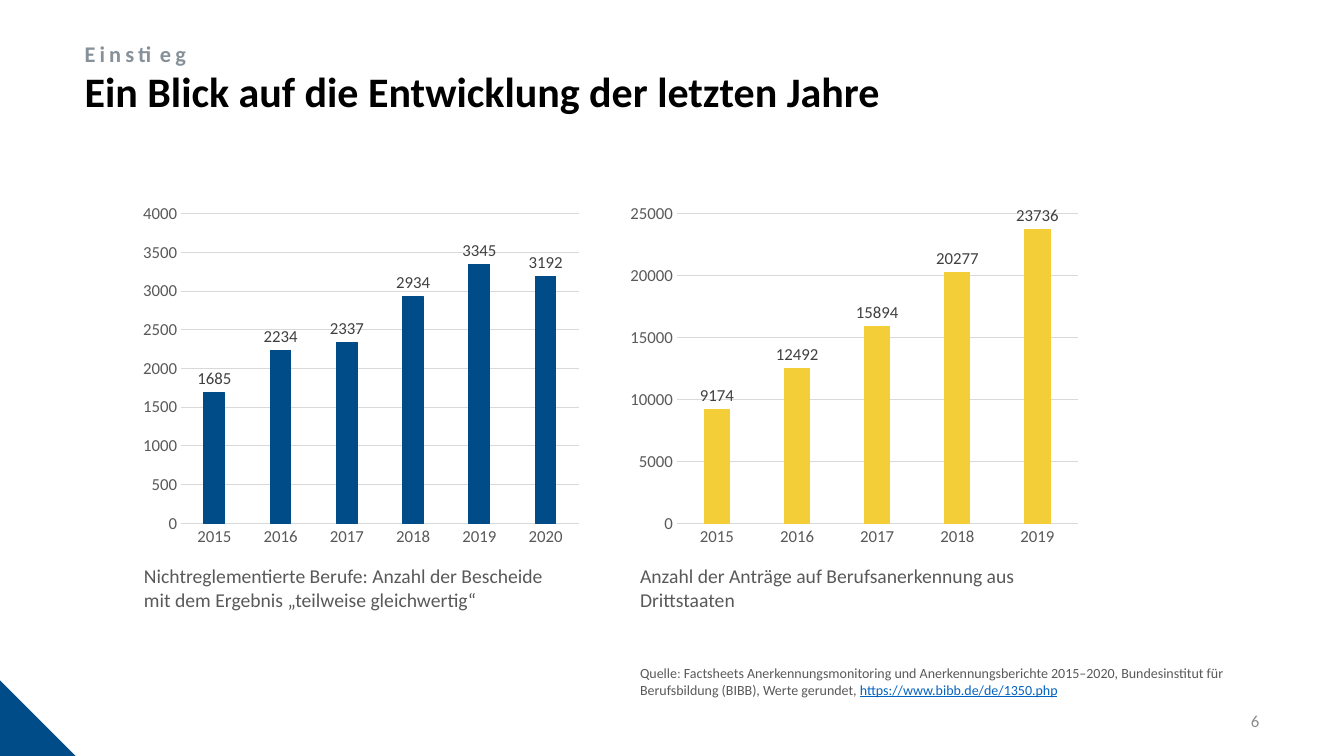
from pptx import Presentation
from pptx import util as u
from pptx.chart.data import CategoryChartData
from pptx.dml.color import RGBColor
from pptx.enum import chart as c, shapes, text

# Content
EYEBROW = "Einstieg"
TITLE = "Ein Blick auf die Entwicklung der letzten Jahre"
PAGE = "6"
CHARTS = [
    dict(left=1.33, width=4.5, caption_left=1.33, color="blue", top_value=4000, step=500,
         values=[1685, 2234, 2337, 2934, 3345, 3192],
         caption="Nichtreglementierte Berufe: Anzahl der Bescheide "
                 "mit dem Ergebnis „teilweise gleichwertig“"),
    dict(left=6.16, width=4.62, caption_left=6.25, color="yellow", top_value=25000, step=5000,
         values=[9174, 12492, 15894, 20277, 23736],
         caption="Anzahl der Anträge auf Berufsanerkennung aus Drittstaaten"),
]
FIRST_YEAR = 2015
SOURCE = [  # text, colour, underlined
    ("Quelle", "text", False),
    (": ", "colon", False),
    ("Factsheets Anerkennungsmonitoring und Anerkennungsberichte 2015–2020, "
     "Bundesinstitut für Berufsbildung (BIBB), Werte gerundet, ", "text", False),
    ("https://www.bibb.de/de/1350.php", "link", True),
]


class Theme:
    font = "Calibri"
    colors = dict(blue="004C89", yellow="F4CE39", title="000000", eyebrow="87919A",
                  text="595959", label="404040", grid="D9D9D9", colon="7C7C7C",
                  link="0563C1", page="8C8C8C")
    sizes = dict(title=30, eyebrow=16, caption=14, chart=12, page=12, source=10)


def color(name):
    return RGBColor.from_string(Theme.colors[name])


def set_font(font, size, color_name, bold=False):
    font.name = Theme.font
    font.size = u.Pt(Theme.sizes[size])
    font.color.rgb = color(color_name)
    font.bold = bold


def add_text(slide, box, words, size, color_name, bold=False):
    shape = slide.shapes.add_textbox(*map(u.Inches, box))
    shape.text_frame.word_wrap = True
    paragraph = shape.text_frame.paragraphs[0]
    paragraph.text = words
    set_font(paragraph.font, size, color_name, bold)
    return shape.text_frame, paragraph


def set_line(line, color_name):
    line.color.rgb = color(color_name)
    line.width = u.Pt(0.75)


def add_column_chart(slide, item):
    data = CategoryChartData()
    data.categories = [str(FIRST_YEAR + i) for i in range(len(item["values"]))]
    data.add_series("Series 1", item["values"])
    box = map(u.Inches, (item["left"], 1.95, item["width"], 3.55))
    chart = slide.shapes.add_chart(c.XL_CHART_TYPE.COLUMN_CLUSTERED, *box, data).chart
    chart.has_title = chart.has_legend = False
    set_font(chart.font, "chart", "text")

    # Axes
    for axis in (chart.category_axis, chart.value_axis):
        axis.major_tick_mark = axis.minor_tick_mark = c.XL_TICK_MARK.NONE
        set_font(axis.tick_labels.font, "chart", "text")
    set_line(chart.category_axis.format.line, "grid")
    value_axis = chart.value_axis
    value_axis.minimum_scale = 0
    value_axis.maximum_scale = item["top_value"]
    value_axis.major_unit = item["step"]
    value_axis.format.line.fill.background()
    set_line(value_axis.major_gridlines.format.line, "grid")

    # Columns and their labels
    plot = chart.plots[0]
    plot.gap_width, plot.overlap = 219, -27
    plot.vary_by_categories = False
    series = plot.series[0]
    series.format.fill.solid()
    series.format.fill.fore_color.rgb = color(item["color"])
    set_line(series.format.line, item["color"])
    labels = series.data_labels
    labels.show_value = True
    labels.position = c.XL_LABEL_POSITION.OUTSIDE_END
    set_font(labels.font, "chart", "label")


def main():
    presentation = Presentation()
    presentation.slide_width, presentation.slide_height = u.Inches(13.33), u.Inches(7.5)
    slide = presentation.slides.add_slide(presentation.slide_layouts[5])

    # Corner triangle
    corner = slide.shapes.add_shape(shapes.MSO_SHAPE.RIGHT_TRIANGLE, 0, u.Inches(6.75),
                                    u.Inches(0.75), u.Inches(0.75))
    corner.shadow.inherit = False
    corner.fill.solid()
    corner.fill.fore_color.rgb = color("blue")
    corner.line.fill.background()

    # Title and the line above it
    title = slide.shapes.title
    title.left, title.top, title.width, title.height = map(u.Inches, (0.74, 0.32, 10.86, 1.22))
    title.text = TITLE
    title.text_frame.auto_size = text.MSO_AUTO_SIZE.NONE
    title.text_frame.vertical_anchor = text.MSO_ANCHOR.MIDDLE
    paragraph = title.text_frame.paragraphs[0]
    paragraph.alignment = text.PP_ALIGN.LEFT
    paragraph.line_spacing = 0.9
    set_font(paragraph.font, "title", "title", True)

    _, paragraph = add_text(slide, (0.74, 0.38, 11.1, 0.52), EYEBROW, "eyebrow", "eyebrow", True)
    paragraph.line_spacing = 0.9
    paragraph.runs[0]._r.get_or_add_rPr().set("spc", "300")

    # Charts with captions
    for item in CHARTS:
        add_column_chart(slide, item)
        add_text(slide, (item["caption_left"], 5.55, 4.37, 0.57), item["caption"],
                 "caption", "text")

    # Source
    _, paragraph = add_text(slide, (6.25, 6.54, 5.99, 0.44), "", "source", "text")
    for words, color_name, underlined in SOURCE:
        run = paragraph.add_run()
        run.text = words
        set_font(run.font, "source", color_name)
        run.font.underline = underlined

    # Page number
    frame, paragraph = add_text(slide, (11.84, 6.95, 0.75, 0.4), PAGE, "page", "page")
    frame.vertical_anchor = text.MSO_ANCHOR.MIDDLE
    paragraph.alignment = text.PP_ALIGN.RIGHT

    presentation.save("out.pptx")


if __name__ == "__main__":
    main()
